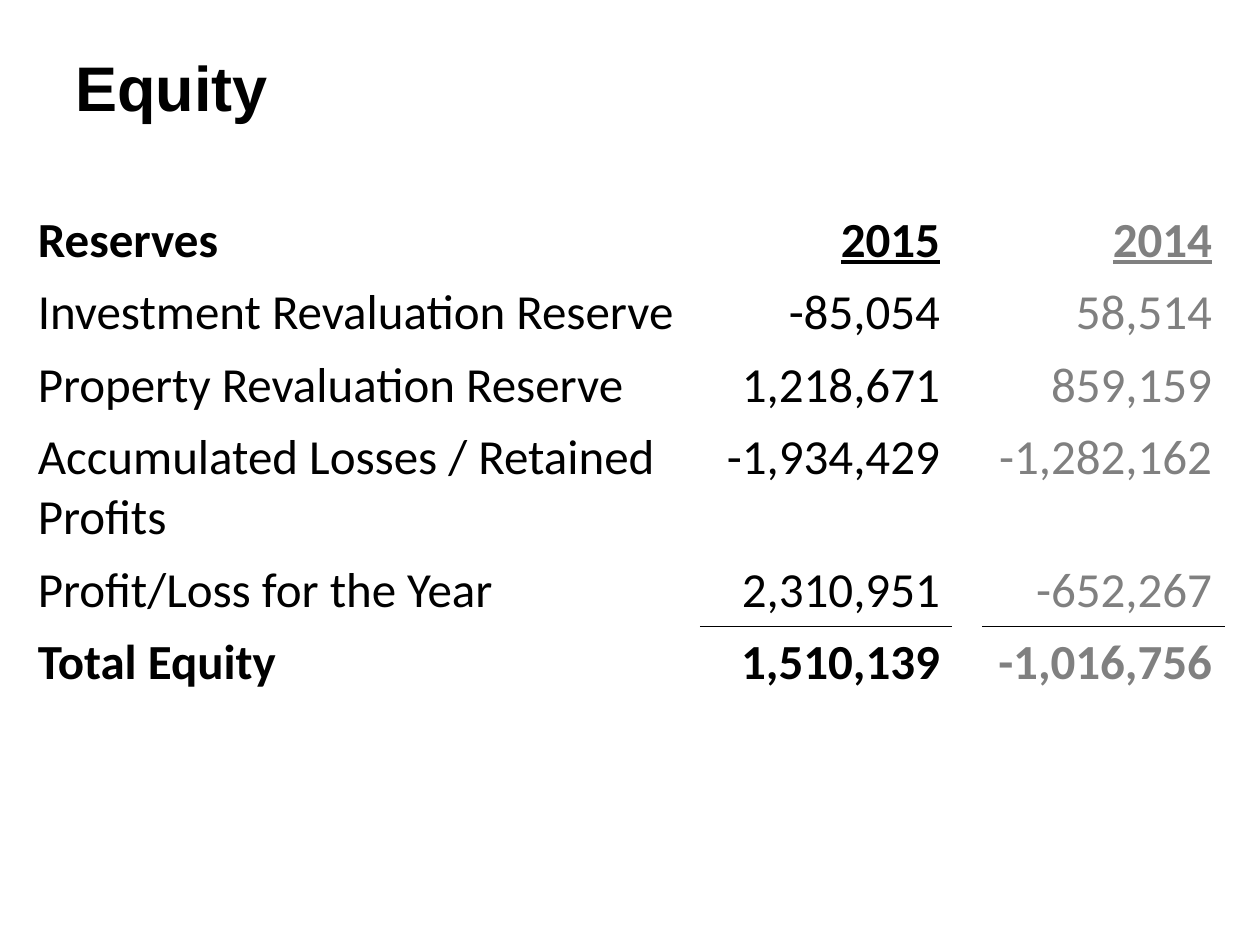
"""Build the equity slide: a title and a two-year table of reserves."""
import pptx
import pptx.dml.color
import pptx.enum.text
import pptx.oxml
import pptx.oxml.ns
import pptx.util
from pptx.util import Inches

BLACK = pptx.dml.color.RGBColor(0x00, 0x00, 0x00)
GREY = pptx.dml.color.RGBColor(0x80, 0x80, 0x80)
ALIGN = pptx.enum.text.PP_ALIGN

COLUMN_WIDTHS = (5.36, 2, 0.24, 1.92)
ROW_HEIGHT = 0.52
YEAR_COLUMNS = (1, 3)
ROWS = (
    ("Reserves", "2015", "", "2014"),
    ("Investment Revaluation Reserve", "-85,054", "", "58,514"),
    ("Property Revaluation Reserve", "1,218,671", "", "859,159"),
    ("Accumulated Losses / Retained Profits", "-1,934,429", "", "-1,282,162"),
    ("Profit/Loss for the Year", "2,310,951", "", "-652,267"),
    ("Total Equity", "1,510,139", "", "-1,016,756"),
)
TOTAL = len(ROWS) - 1


def style_text(p, font, size, color, bold, align):
    p.alignment = align
    for r in p.runs:
        r.font.name = font
        r.font.size = pptx.util.Pt(size)
        r.font.color.rgb = color
        r.font.bold = bold


def add_title(s, text):
    sp = s.shapes.title
    sp.left, sp.top, sp.width, sp.height = map(Inches, (0.5, 0.29, 9.5, 0.79))
    tf = sp.text_frame
    tf.text = text
    tf.vertical_anchor = pptx.enum.text.MSO_ANCHOR.MIDDLE
    style_text(tf.paragraphs[0], "Arial", 36, BLACK, True, ALIGN.LEFT)


def add_border(cell, side):
    ln = pptx.oxml.parse_xml(
        f'<a:{side} {pptx.oxml.ns.nsdecls("a")} w="{pptx.util.Pt(1)}">'
        f'<a:solidFill><a:srgbClr val="{BLACK}"/></a:solidFill></a:{side}>'
    )
    cell._tc.get_or_add_tcPr().insert(0, ln)


def fill_cell(cell, text, row, col):
    cell.fill.background()
    cell.text_frame.text = text
    p = cell.text_frame.paragraphs[0]
    is_year = col in YEAR_COLUMNS
    style_text(p, "Calibri", 28, GREY if col == YEAR_COLUMNS[-1] else BLACK,
               row in (0, TOTAL), ALIGN.RIGHT if is_year else ALIGN.LEFT)
    if is_year and row == 0:
        p.runs[0].font.underline = True
    if is_year and row == TOTAL - 1:
        add_border(cell, "lnB")
    if is_year and row == TOTAL:
        add_border(cell, "lnT")


def add_equity_table(s):
    frame = s.shapes.add_table(
        len(ROWS), len(COLUMN_WIDTHS), Inches(0.2), Inches(1.62),
        Inches(sum(COLUMN_WIDTHS)), Inches(ROW_HEIGHT * len(ROWS)))
    table = frame.table
    table.first_row = False
    table.horz_banding = False
    for column, width in zip(table.columns, COLUMN_WIDTHS):
        column.width = Inches(width)
    for row, values in enumerate(ROWS):
        table.rows[row].height = Inches(ROW_HEIGHT)
        for col, text in enumerate(values):
            fill_cell(table.cell(row, col), text, row, col)


def main():
    prs = pptx.Presentation()
    prs.slide_width, prs.slide_height = Inches(10), Inches(7.5)
    s = prs.slides.add_slide(prs.slide_layouts[5])
    add_title(s, "Equity")
    add_equity_table(s)
    prs.save("out.pptx")


if __name__ == "__main__":
    main()
